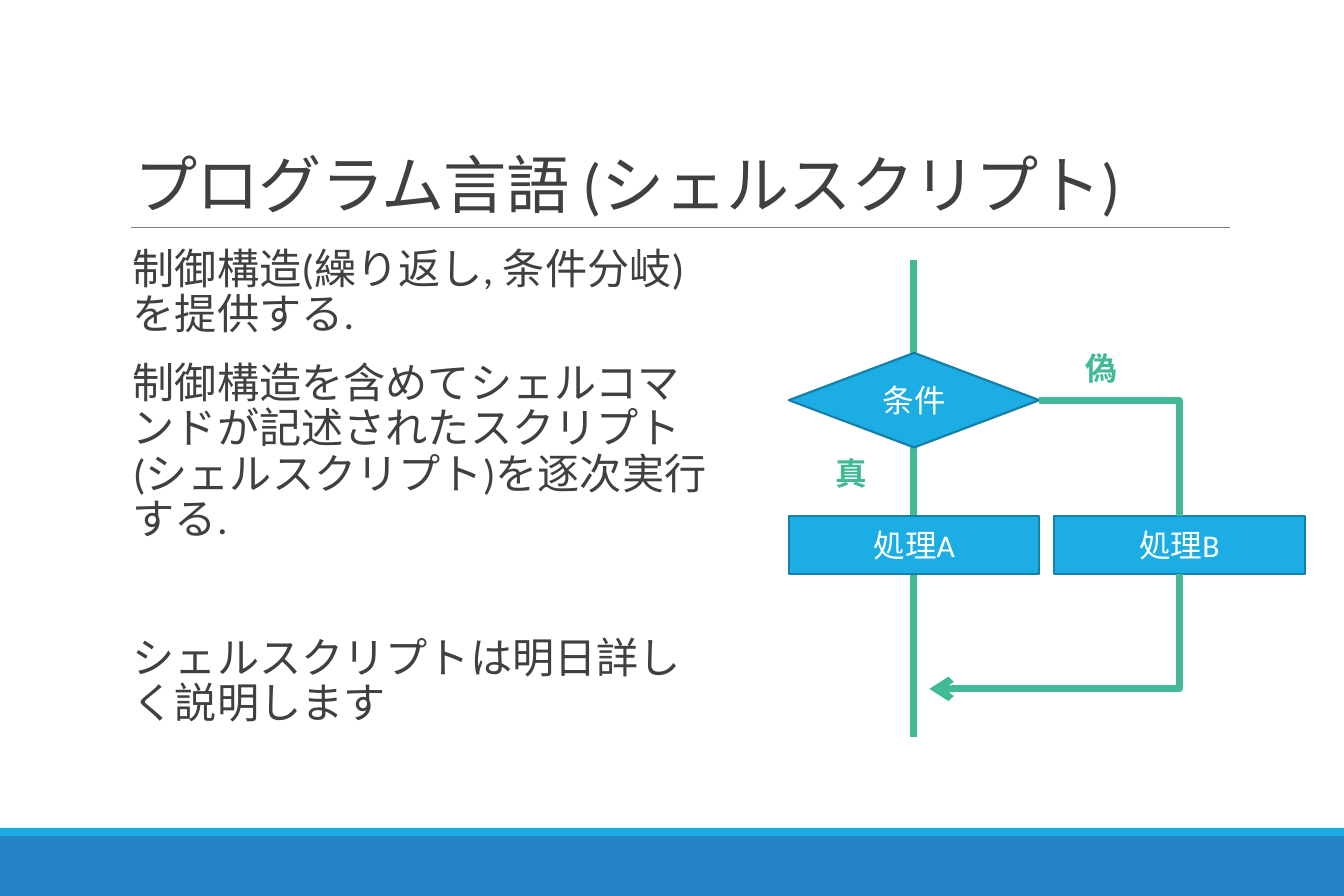
from lxml import etree
from pptx import Presentation
from pptx.dml.color import RGBColor
from pptx.enum.shapes import MSO_CONNECTOR, MSO_SHAPE
from pptx.enum.text import MSO_ANCHOR, PP_ALIGN
from pptx.oxml.ns import qn
from pptx.util import Cm, Pt

STRAIGHT, ELBOW = MSO_CONNECTOR.STRAIGHT, MSO_CONNECTOR.ELBOW
RECT = MSO_SHAPE.RECTANGLE
CHOICE = MSO_SHAPE.FLOWCHART_DECISION
STEP = MSO_SHAPE.FLOWCHART_PROCESS
LEFT, CENTER = PP_ALIGN.LEFT, PP_ALIGN.CENTER
BOTTOM, MIDDLE = MSO_ANCHOR.BOTTOM, MSO_ANCHOR.MIDDLE

FONT = "Calibri"
BLUE, SKY, EDGE = "2683C6", "1CADE4", "1580A9"
GREEN, GRAY, DARK, WHITE = "42BA97", "808080", "404040", "FFFFFF"

BODY = [
    ("制御構造(繰り返し, 条件分岐) を提供する.", 0),
    ("制御構造を含めてシェルコマンドが記述されたスクリプト"
     "(シェルスクリプト)を逐次実行する.", 11.3),
    ("シェルスクリプトは明日詳しく説明します", 51),
]


def color(code):
    return RGBColor.from_string(code)


def style(para, size, code, bold=False):
    font = para.font
    font.name, font.size, font.bold = FONT, Pt(size), bold
    font.color.rgb = color(code)


def add_title(slide, text):
    title = slide.shapes.title
    title.left, title.top = Cm(2.44), Cm(0.76)
    title.width, title.height = Cm(22.28), Cm(3.81)
    frame = title.text_frame
    frame.text = text
    frame.vertical_anchor = BOTTOM
    para = frame.paragraphs[0]
    para.alignment, para.line_spacing = LEFT, 0.85
    style(para, 36, DARK)
    para.font._element.set("spc", "-50")


def add_body(slide, items):
    box = slide.shapes.add_textbox(Cm(2.44), Cm(4.85), Cm(12.01), Cm(10.57))
    frame = box.text_frame
    frame.word_wrap = True
    frame.margin_left, frame.margin_right = Cm(0.23), 0
    for i, (text, gap) in enumerate(items):
        para = frame.add_paragraph() if i else frame.paragraphs[0]
        para.text = text
        para.line_spacing = 0.9
        para.space_before, para.space_after = Pt(gap), Pt(1.9)
        style(para, 24, DARK)


def add_label(slide, text, left, top):
    box = slide.shapes.add_textbox(Cm(left), Cm(top), Cm(1.14), Cm(1.02))
    box.text_frame.word_wrap = False
    para = box.text_frame.paragraphs[0]
    para.text = text
    style(para, 18, GREEN, True)


def add_band(slide, top, height, fill):
    band = slide.shapes.add_shape(RECT, 0, Cm(top), Cm(27), Cm(height))
    band.shadow.inherit = False
    band.fill.solid()
    band.fill.fore_color.rgb = color(fill)
    band.line.fill.background()


def add_node(slide, kind, text, left, top, height):
    node = slide.shapes.add_shape(
        kind, Cm(left), Cm(top), Cm(5.03), Cm(height))
    node.shadow.inherit = False
    node.fill.solid()
    node.fill.fore_color.rgb = color(SKY)
    node.line.color.rgb = color(EDGE)
    node.line.width = Pt(1.25)
    node.text_frame.vertical_anchor = MIDDLE
    para = node.text_frame.paragraphs[0]
    para.text = text
    para.alignment = CENTER
    style(para, 18, WHITE)


def add_line(slide, kind, x1, y1, x2, y2, code=GREEN, width=4):
    line = slide.shapes.add_connector(kind, Cm(x1), Cm(y1), Cm(x2), Cm(y2))
    line.line.color.rgb = color(code)
    line.line.width = Pt(width)
    etree.SubElement(line._element.spPr, qn("a:effectLst"))
    return line


def add_bend(slide, x1, y1, x2, y2):
    line = add_line(slide, ELBOW, x1, y1, x2, y2)
    line._element.spPr.find(qn("a:prstGeom")).set("prst", "bentConnector2")
    return line


def add_return(slide, x1, y1, x2, y2):
    mid_x, mid_y = (x1 + x2) / 2, (y1 + y2) / 2
    half_w, half_h = (y2 - y1) / 2, (x1 - x2) / 2
    line = add_bend(slide, mid_x - half_w, mid_y - half_h,
                    mid_x + half_w, mid_y + half_h)
    props = line._element.spPr
    props.find(qn("a:xfrm")).set("rot", str(90 * 60000))
    etree.SubElement(props.find(qn("a:ln")), qn("a:tailEnd"), type="arrow")


def add_flow(slide):
    main_x, side_x = 18.36, 23.7
    add_line(slide, STRAIGHT, main_x, 5.23, main_x, 14.81)
    add_node(slide, CHOICE, "条件", 15.85, 7.09, 1.9)
    add_node(slide, STEP, "処理A", 15.85, 10.36, 1.17)
    add_node(slide, STEP, "処理B", 21.18, 10.36, 1.17)
    add_bend(slide, 20.88, 8.05, side_x, 10.36)
    add_return(slide, side_x, 11.53, 18.67, 13.84)
    add_label(slide, "偽", 21.56, 6.88)
    add_label(slide, "真", 16.54, 8.99)


def main():
    deck = Presentation()
    deck.slide_width, deck.slide_height = Cm(27), Cm(18)
    slide = deck.slides.add_slide(deck.slide_layouts[5])
    add_band(slide, 16.8, 1.2, BLUE)
    add_band(slide, 16.63, 0.17, SKY)
    add_line(slide, STRAIGHT, 2.64, 4.57, 24.71, 4.57, GRAY, 0.5)
    add_title(slide, "プログラム言語 (シェルスクリプト)")
    add_body(slide, BODY)
    add_flow(slide)
    deck.save("out.pptx")


if __name__ == "__main__":
    main()
